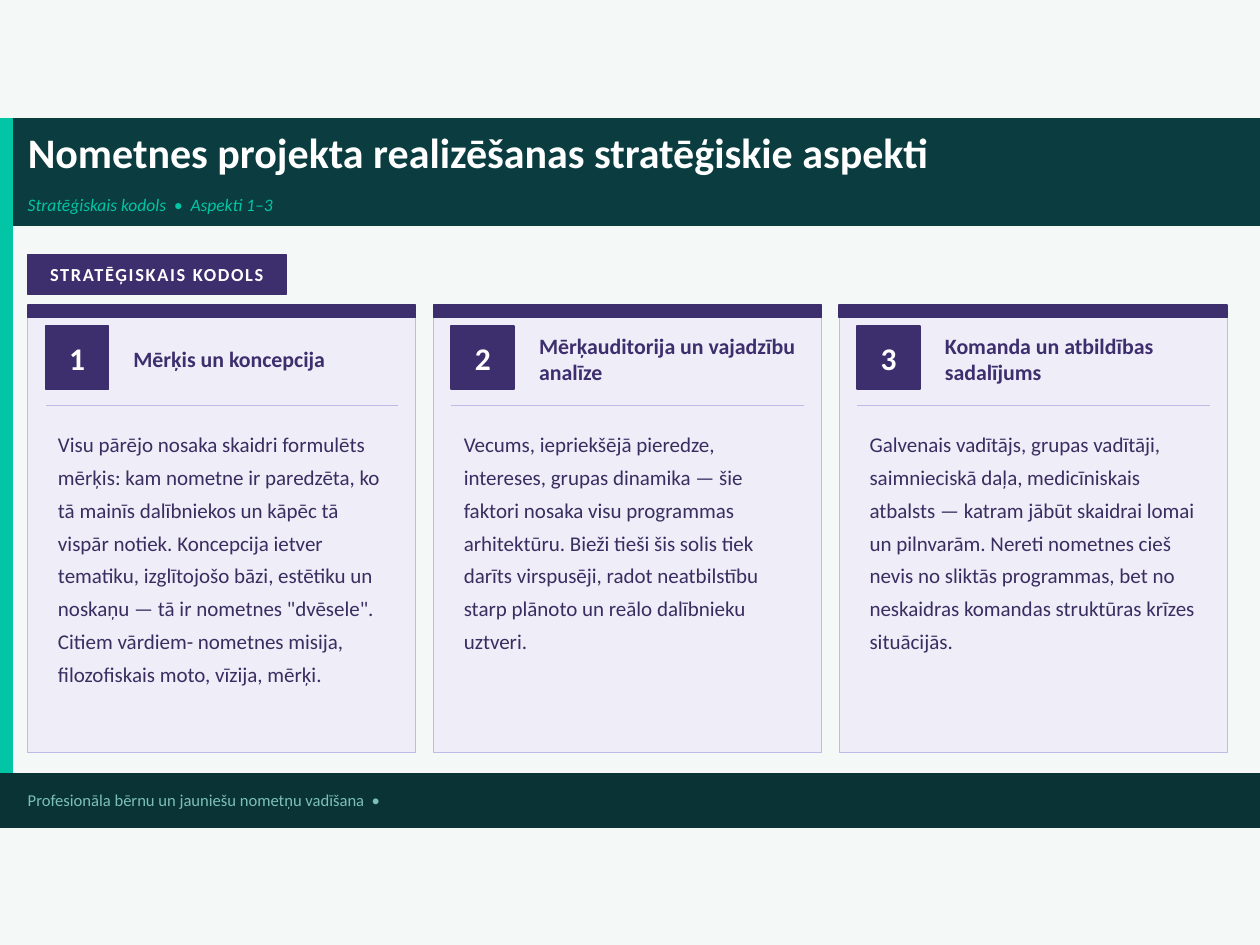
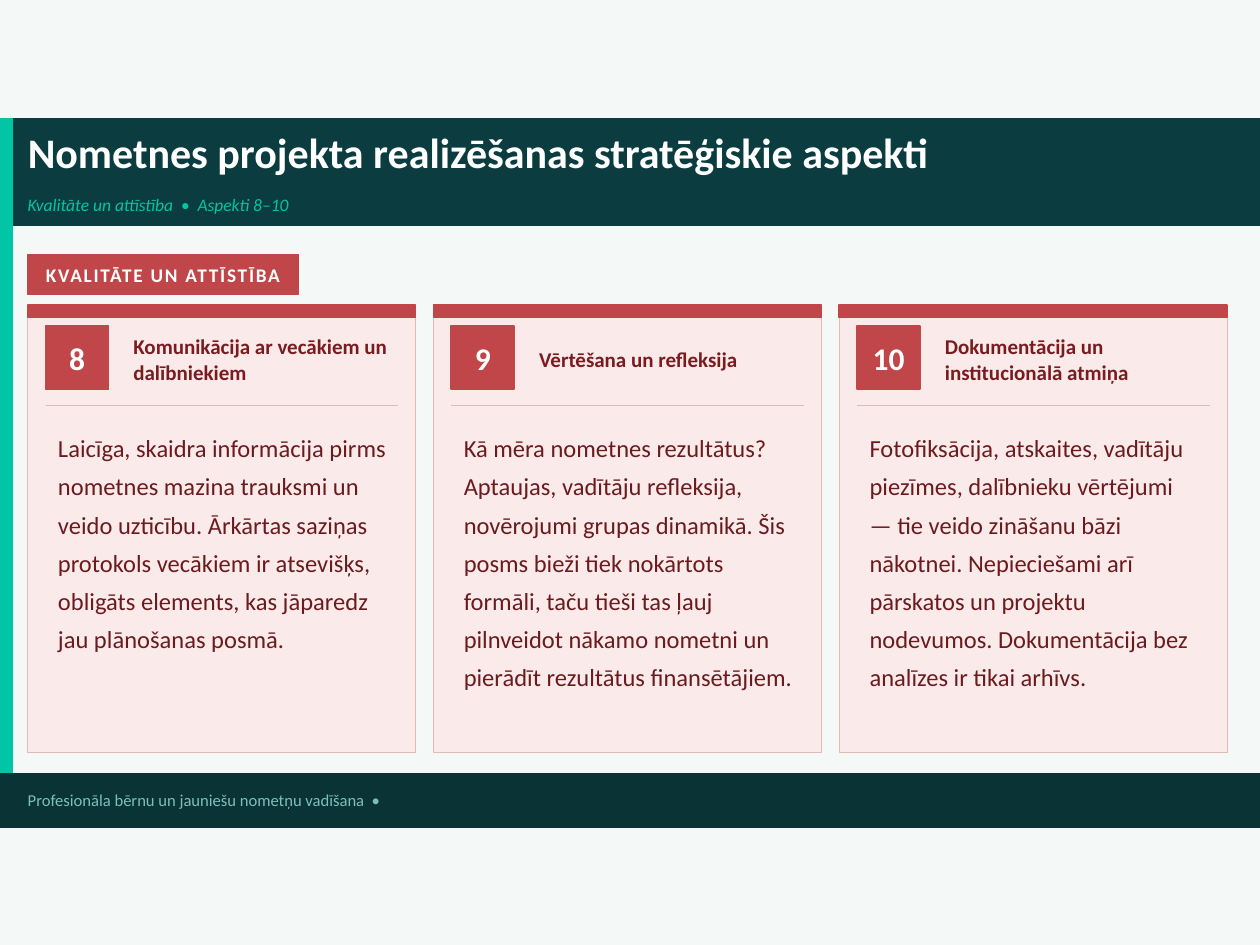
"""Build two slides on the strategic aspects of running a camp project."""
from dataclasses import dataclass

from lxml.etree import SubElement
from pptx import Presentation
from pptx.dml.color import RGBColor
from pptx.enum.shapes import MSO_CONNECTOR, MSO_SHAPE
from pptx.enum.text import MSO_ANCHOR, MSO_AUTO_SIZE, PP_ALIGN
from pptx.oxml.ns import qn
from pptx.util import Cm, Pt

TITLE = "Nometnes projekta realizēšanas stratēģiskie aspekti"
FOOTER = "Profesionāla bērnu un jauniešu nometņu vadīšana  •"
SLIDES = [
    {
        "sub": "Stratēģiskais kodols  •  Aspekti 1–3",
        "tag": "STRATĒĢISKAIS KODOLS",
        "tone": "violet",
        "first": 1,
        "cards": [
            ("Mērķis un koncepcija",
             "Visu pārējo nosaka skaidri formulēts mērķis: kam nometne ir "
             "paredzēta, ko tā mainīs dalībniekos un kāpēc tā vispār notiek. "
             "Koncepcija ietver tematiku, izglītojošo bāzi, estētiku un "
             "noskaņu — tā ir nometnes \"dvēsele\". Citiem vārdiem- nometnes "
             "misija, filozofiskais moto, vīzija, mērķi."),
            ("Mērķauditorija un vajadzību analīze",
             "Vecums, iepriekšējā pieredze, intereses, grupas dinamika — šie "
             "faktori nosaka visu programmas arhitektūru. Bieži tieši šis "
             "solis tiek darīts virspusēji, radot neatbilstību starp plānoto "
             "un reālo dalībnieku uztveri."),
            ("Komanda un atbildības sadalījums",
             "Galvenais vadītājs, grupas vadītāji, saimnieciskā daļa, "
             "medicīniskais atbalsts — katram jābūt skaidrai lomai un "
             "pilnvarām. Nereti nometnes cieš nevis no sliktās programmas, "
             "bet no neskaidras komandas struktūras krīzes situācijās."),
        ],
    },
    {
        "sub": "Kvalitāte un attīstība  •  Aspekti 8–10",
        "tag": "KVALITĀTE UN ATTĪSTĪBA",
        "tone": "red",
        "first": 8,
        "cards": [
            ("Komunikācija ar vecākiem un dalībniekiem",
             "Laicīga, skaidra informācija pirms nometnes mazina trauksmi un "
             "veido uzticību. Ārkārtas saziņas protokols vecākiem ir "
             "atsevišķs, obligāts elements, kas jāparedz jau plānošanas "
             "posmā."),
            ("Vērtēšana un refleksija",
             "Kā mēra nometnes rezultātus? Aptaujas, vadītāju refleksija, "
             "novērojumi grupas dinamikā. Šis posms bieži tiek nokārtots "
             "formāli, taču tieši tas ļauj pilnveidot nākamo nometni un "
             "pierādīt rezultātus finansētājiem."),
            ("Dokumentācija un institucionālā atmiņa",
             "Fotofiksācija, atskaites, vadītāju piezīmes, dalībnieku "
             "vērtējumi — tie veido zināšanu bāzi nākotnei. Nepieciešami arī "
             "pārskatos un projektu nodevumos. Dokumentācija bez analīzes ir "
             "tikai arhīvs."),
        ],
    },
]


@dataclass(frozen=True)
class Tone:
    """Colours, type sizes and tag width of one theme group."""
    main: str
    fill: str
    edge: str
    head: str
    body: str
    tag_pt: float
    head_pt: float
    body_pt: float
    tag_w: float


@dataclass(frozen=True)
class Theme:
    """Colours and type sizes shared by all slides."""
    font = "Calibri"
    back = "F4F9F8"
    band = "0B3D40"
    mint = "01C5A4"
    base = "093335"
    note = "7DBFBB"
    white = "FFFFFF"
    title_pt = 24
    sub_pt = 10
    foot_pt = 9.5
    num_pt = 18
    violet = Tone("3D2E6E", "EEEDF8", "C0BAE8", "3D2E6E", "3A2D60",
                  10.5, 12.5, 12, 5.21)
    red = Tone("C0464A", "FAEAEA", "DFBBB5", "7A1C1F", "6B1B1E",
               11, 12, 14, 5.46)


THEME = Theme()
WIDE, HIGH = 25.4, 19.05
LEFT, TOP = 0.56, 2.39
CARD_Y, CARD_W, CARD_H, STEP = 6.15, 7.82, 9.02, 8.18
PAD = 0.36


def color(code):
    """Turn a hex code into a colour."""
    return RGBColor.from_string(code)


def write(shape, text, size, tint, bold=False, slant=False, mid=True,
          center=False, inset=False, lead=None, track=None):
    """Put formatted text into a shape."""
    frame = shape.text_frame
    frame.word_wrap = True
    frame.auto_size = MSO_AUTO_SIZE.NONE
    frame.vertical_anchor = MSO_ANCHOR.MIDDLE if mid else MSO_ANCHOR.TOP
    if not inset:
        frame.margin_left = frame.margin_right = 0
        frame.margin_top = frame.margin_bottom = 0
    para = frame.paragraphs[0]
    para.alignment = PP_ALIGN.CENTER if center else PP_ALIGN.LEFT
    if lead:
        para.line_spacing = lead
    run = para.add_run()
    run.text = text
    font = run.font
    font.name, font.size = THEME.font, Pt(size)
    font.bold, font.italic = bold, slant
    font.color.rgb = color(tint)
    if track:
        run._r.get_or_add_rPr().set("spc", str(track * 100))


def label(slide, box, text, size, tint, **style):
    """Add a text box."""
    write(slide.shapes.add_textbox(*map(Cm, box)), text, size, tint, **style)


def block(slide, box, fill, edge=None, width=1):
    """Add a filled rectangle."""
    shape = slide.shapes.add_shape(MSO_SHAPE.RECTANGLE, *map(Cm, box))
    shape.shadow.inherit = False
    shape.fill.solid()
    shape.fill.fore_color.rgb = color(fill)
    shape.line.color.rgb = color(edge or fill)
    shape.line.width = Pt(width)
    return shape


def rule(slide, x, y, span, tint):
    """Add a thin level line."""
    line = slide.shapes.add_connector(
        MSO_CONNECTOR.STRAIGHT, Cm(x), Cm(y), Cm(x + span), Cm(y))
    line.line.color.rgb = color(tint)
    line.line.width = Pt(0.5)
    SubElement(line.element.spPr, qn("a:effectLst"))


def frame(slide, sub):
    """Draw the bands, title, subtitle and footer."""
    block(slide, (0, TOP, WIDE, 2.16), THEME.band)
    block(slide, (0, TOP, 0.25, 14.27), THEME.mint)
    title = slide.shapes.title
    title.element.getparent().append(title.element)
    title.left, title.top, title.width, title.height = map(
        Cm, (LEFT, TOP, 24.38, 1.32))
    write(title, TITLE, THEME.title_pt, THEME.white, bold=True)
    label(slide, (LEFT, 3.71, 24.38, 0.84), sub, THEME.sub_pt, THEME.mint,
          slant=True)
    block(slide, (0, 15.6, WIDE, 1.07), THEME.base)
    label(slide, (LEFT, 15.65, 23.88, 0.97), FOOTER, THEME.foot_pt,
          THEME.note)


def card(slide, x, num, head, body, tone):
    """Draw one numbered card."""
    block(slide, (x, CARD_Y, CARD_W, CARD_H), tone.fill, tone.edge, 0.6)
    block(slide, (x, CARD_Y, CARD_W, 0.25), tone.main)
    badge = block(slide, (x + PAD, 6.58, 1.27, 1.27), tone.main)
    write(badge, str(num), THEME.num_pt, THEME.white, bold=True, center=True)
    label(slide, (x + 1.88, 6.53, 5.69, 1.42), head, tone.head_pt, tone.head,
          bold=True, inset=True)
    rule(slide, x + PAD, 8.18, 7.11, tone.edge)
    label(slide, (x + PAD, 8.43, 7.16, 6.35), body, tone.body_pt, tone.body,
          mid=False, inset=True, lead=1.3)


def main():
    """Build and save the deck."""
    deck = Presentation()
    deck.slide_width, deck.slide_height = Cm(WIDE), Cm(HIGH)
    back = deck.slide_master.background.fill
    back.solid()
    back.fore_color.rgb = color(THEME.back)
    for page in SLIDES:
        slide = deck.slides.add_slide(deck.slide_layouts[5])
        tone = getattr(THEME, page["tone"])
        frame(slide, page["sub"])
        tag = block(slide, (LEFT, 5.13, tone.tag_w, 0.81), tone.main)
        write(tag, page["tag"], tone.tag_pt, THEME.white, bold=True,
              center=True, track=1)
        for i, (head, body) in enumerate(page["cards"]):
            card(slide, LEFT + i * STEP, page["first"] + i, head, body, tone)
    deck.save("out.pptx")


if __name__ == "__main__":
    main()
